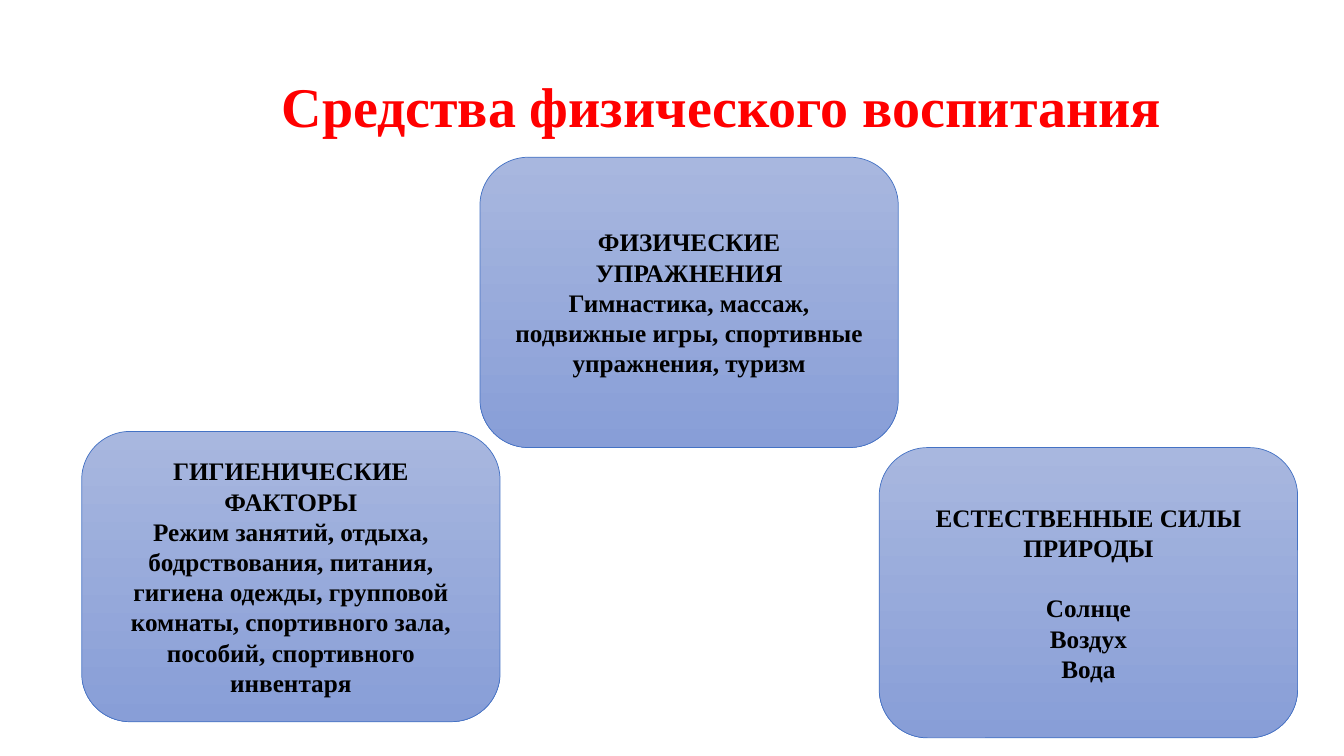
from pptx import Presentation
from pptx.dml.color import RGBColor
from pptx.enum.shapes import MSO_SHAPE
from pptx.enum.text import MSO_ANCHOR, MSO_AUTO_SIZE, PP_ALIGN
from pptx.util import Inches, Pt

RED = RGBColor(0xFF, 0x00, 0x00)
BLACK = RGBColor(0x00, 0x00, 0x00)
BLUE = RGBColor(0x44, 0x72, 0xC4)
GRADIENT = [RGBColor(0xA8, 0xB7, 0xDF), RGBColor(0x88, 0x9E, 0xD7)]

TITLE = "Средства физического воспитания"
TITLE_BOX = (2.49, 0.66, 9.33, 0.77)
CARD_SIZE = (4.15, 2.88)
CARDS = [
    {"at": (4.76, 1.56), "gap": 0, "lines": [
        "ФИЗИЧЕСКИЕ УПРАЖНЕНИЯ",
        "Гимнастика, массаж, подвижные игры, спортивные упражнения, туризм"]},
    {"at": (0.81, 4.28), "gap": 0, "lines": [
        "ГИГИЕНИЧЕСКИЕ ФАКТОРЫ",
        "Режим занятий, отдыха, бодрствования, питания, гигиена одежды, "
        "групповой комнаты, спортивного зала, пособий, спортивного инвентаря"]},
    {"at": (8.72, 4.44), "gap": 21.5, "lines": [
        "ЕСТЕСТВЕННЫЕ СИЛЫ ПРИРОДЫ", "Солнце", "Воздух", "Вода"]},
]
TITLE_FONT = {"name": "Times New Roman", "size": Pt(40), "bold": True}
CARD_FONT = {"name": "Times New Roman", "size": Pt(18), "bold": True}


def write(tf, lines, font, color, gap=0):
    tf.word_wrap = True
    for i, line in enumerate(lines):
        p = tf.paragraphs[0] if i == 0 else tf.add_paragraph()
        p.alignment = PP_ALIGN.CENTER
        p.line_spacing = 1.0
        p.space_before = Pt(gap if i == 1 else 0)
        r = p.add_run()
        r.text = line
        for key, value in font.items():
            setattr(r.font, key, value)
        r.font.color.rgb = color


def add_card(s, card):
    sp = s.shapes.add_shape(MSO_SHAPE.ROUNDED_RECTANGLE,
                            *map(Inches, card["at"] + CARD_SIZE))
    sp.shadow.inherit = False
    sp.fill.gradient()
    sp.fill.gradient_angle = 270
    for stop, color in zip(sp.fill.gradient_stops, GRADIENT):
        stop.color.rgb = color
    sp.line.color.rgb = BLUE
    sp.line.width = Pt(0.5)
    sp.text_frame.vertical_anchor = MSO_ANCHOR.MIDDLE
    write(sp.text_frame, card["lines"], CARD_FONT, BLACK, card["gap"])


prs = Presentation()
prs.slide_width, prs.slide_height = Inches(13.33), Inches(7.5)
s = prs.slides.add_slide(prs.slide_layouts[5])

title = s.shapes.title
title.left, title.top, title.width, title.height = map(Inches, TITLE_BOX)
title.text_frame.auto_size = MSO_AUTO_SIZE.NONE
title.text_frame.vertical_anchor = MSO_ANCHOR.TOP
write(title.text_frame, [TITLE], TITLE_FONT, RED)

for card in CARDS:
    add_card(s, card)

prs.save("out.pptx")
